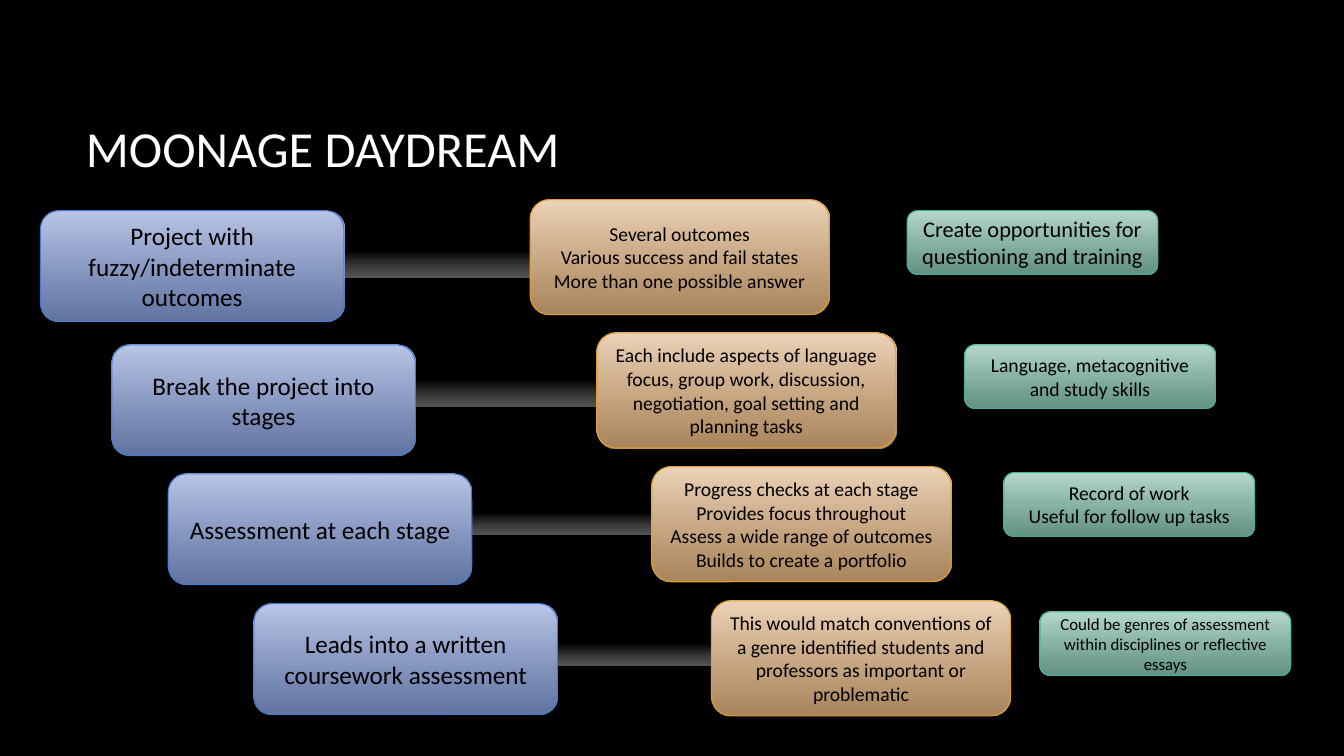
from dataclasses import dataclass

import pptx
import pptx.dml.color
import pptx.enum.shapes
import pptx.enum.text
import pptx.util
from lxml import etree
from pptx.util import Cm

DRAWING = "{http://schemas.openxmlformats.org/drawingml/2006/main}"


@dataclass(frozen=True)
class BoxStyle:
    top_colour: str
    bottom_colour: str
    line_colour: str
    width: float
    height: float


@dataclass(frozen=True)
class Theme:
    font: str = "Calibri"
    background: str = "000000"
    title_colour: str = "FFFFFF"
    text_colour: str = "000000"
    title_size: int = 36
    step_size: int = 18
    detail_size: int = 14
    line_width: float = 0.75
    bottom_opacity: int = 74
    bar_colours: tuple = ("A6A6A6", "797979")
    step: BoxStyle = BoxStyle("BCC8E9", "859EDA", "477BD1", 7.65, 2.79)
    detail: BoxStyle = BoxStyle("EFD5BA", "E4B47E", "DD9D31", 7.54, 2.9)
    skill: BoxStyle = BoxStyle("B7DACF", "85C3B1", "46B298", 6.32, 1.6)


def rgb(colour):
    return pptx.dml.color.RGBColor.from_string(colour)


class SlideBuilder:
    def __init__(self, slide, theme):
        self.slide = slide
        self.theme = theme

    def background(self):
        fill = self.slide.background.fill
        fill.solid()
        fill.fore_color.rgb = rgb(self.theme.background)

    def format_paragraph(self, paragraph, size, colour, alignment):
        paragraph.alignment = alignment
        paragraph.font.name = self.theme.font
        paragraph.font.size = pptx.util.Pt(size)
        paragraph.font.color.rgb = rgb(colour)

    def title(self, text, left, top, width, height):
        title = self.slide.shapes.title
        title.left, title.top = Cm(left), Cm(top)
        title.width, title.height = Cm(width), Cm(height)
        title.text_frame.text = text
        title.text_frame.vertical_anchor = pptx.enum.text.MSO_ANCHOR.MIDDLE
        self.format_paragraph(title.text_frame.paragraphs[0], self.theme.title_size,
                              self.theme.title_colour, pptx.enum.text.PP_ALIGN.LEFT)

    def gradient_shape(self, kind, bounds, colours, opacities):
        """Add a shape shaded from top to bottom, with opacities in percent."""
        shape = self.slide.shapes.add_shape(kind, *(Cm(length) for length in bounds))
        shape.shadow.inherit = False
        shape.fill.gradient()
        shape.fill.gradient_angle = 270
        for stop, colour in zip(shape.fill.gradient_stops, colours):
            stop.color.rgb = rgb(colour)
        colour_elements = shape.element.spPr.iter(DRAWING + "srgbClr")
        for element, opacity in zip(colour_elements, opacities):
            etree.SubElement(element, DRAWING + "alpha", val=str(opacity * 1000))
        return shape

    def bar(self, left, top, width, height):
        bar = self.gradient_shape(pptx.enum.shapes.MSO_SHAPE.RECTANGLE,
                                  (left, top, width, height), self.theme.bar_colours,
                                  (0, self.theme.bottom_opacity))
        bar.line.fill.background()

    def box(self, style, left, top, lines, size):
        box = self.gradient_shape(pptx.enum.shapes.MSO_SHAPE.ROUNDED_RECTANGLE,
                                  (left, top, style.width, style.height),
                                  (style.top_colour, style.bottom_colour),
                                  (100, self.theme.bottom_opacity))
        box.line.color.rgb = rgb(style.line_colour)
        box.line.width = pptx.util.Pt(self.theme.line_width)
        frame = box.text_frame
        frame.word_wrap = True
        frame.vertical_anchor = pptx.enum.text.MSO_ANCHOR.MIDDLE
        frame.text = "\n".join(lines)
        for paragraph in frame.paragraphs:
            self.format_paragraph(paragraph, size, self.theme.text_colour,
                                  pptx.enum.text.PP_ALIGN.CENTER)


# Each box: left, top, lines; a skill also has its type size.
# Each bar: top, height; it spans the gap between step and detail.
ROWS = [
    {"step": (1.02, 5.31, ["Project with fuzzy/indeterminate outcomes"]),
     "bar": (6.35, 0.64),
     "detail": (13.36, 5.03, ["Several outcomes",
                              "Various success and fail states",
                              "More than one possible answer"]),
     "skill": (22.86, 5.31, ["Create opportunities for questioning and training"], 16)},
    {"step": (2.82, 8.69, ["Break the project into stages"]),
     "bar": (9.6, 0.64),
     "detail": (15.04, 8.39, ["Each include aspects of language focus, group work, "
                              "discussion, negotiation, goal setting and planning tasks"]),
     "skill": (24.31, 8.69, ["Language, metacognitive and study skills"], 14)},
    {"step": (4.24, 11.94, ["Assessment at each stage"]),
     "bar": (12.95, 0.53),
     "detail": (16.43, 11.76, ["Progress checks at each stage",
                               "Provides focus throughout",
                               "Assess a wide range of outcomes",
                               "Builds to create a portfolio"]),
     "skill": (25.3, 11.91, ["Record of work", "Useful for follow up tasks"], 14)},
    {"step": (6.4, 15.21, ["Leads into a written coursework assessment"]),
     "bar": (16.23, 0.53),
     "detail": (17.93, 15.14, ["This would match conventions of a genre identified students "
                               "and professors as important or problematic"]),
     "skill": (26.21, 15.42, ["Could be genres of assessment within disciplines "
                              "or reflective essays"], 12)},
]


def main():
    theme = Theme()
    presentation = pptx.Presentation()
    presentation.slide_width, presentation.slide_height = Cm(33.87), Cm(19.05)
    title_only = presentation.slide_layouts.get_by_name("Title Only")
    builder = SlideBuilder(presentation.slides.add_slide(title_only), theme)
    builder.background()
    builder.title("MOONAGE DAYDREAM", 1.91, 1.7, 28.14, 4.04)
    for row in ROWS:
        bar_left = row["step"][0] + theme.step.width
        bar_top, bar_height = row["bar"]
        builder.bar(bar_left, bar_top, row["detail"][0] - bar_left, bar_height)
        builder.box(theme.step, *row["step"], theme.step_size)
        builder.box(theme.detail, *row["detail"], theme.detail_size)
        builder.box(theme.skill, *row["skill"])
    presentation.save("out.pptx")


if __name__ == "__main__":
    main()
